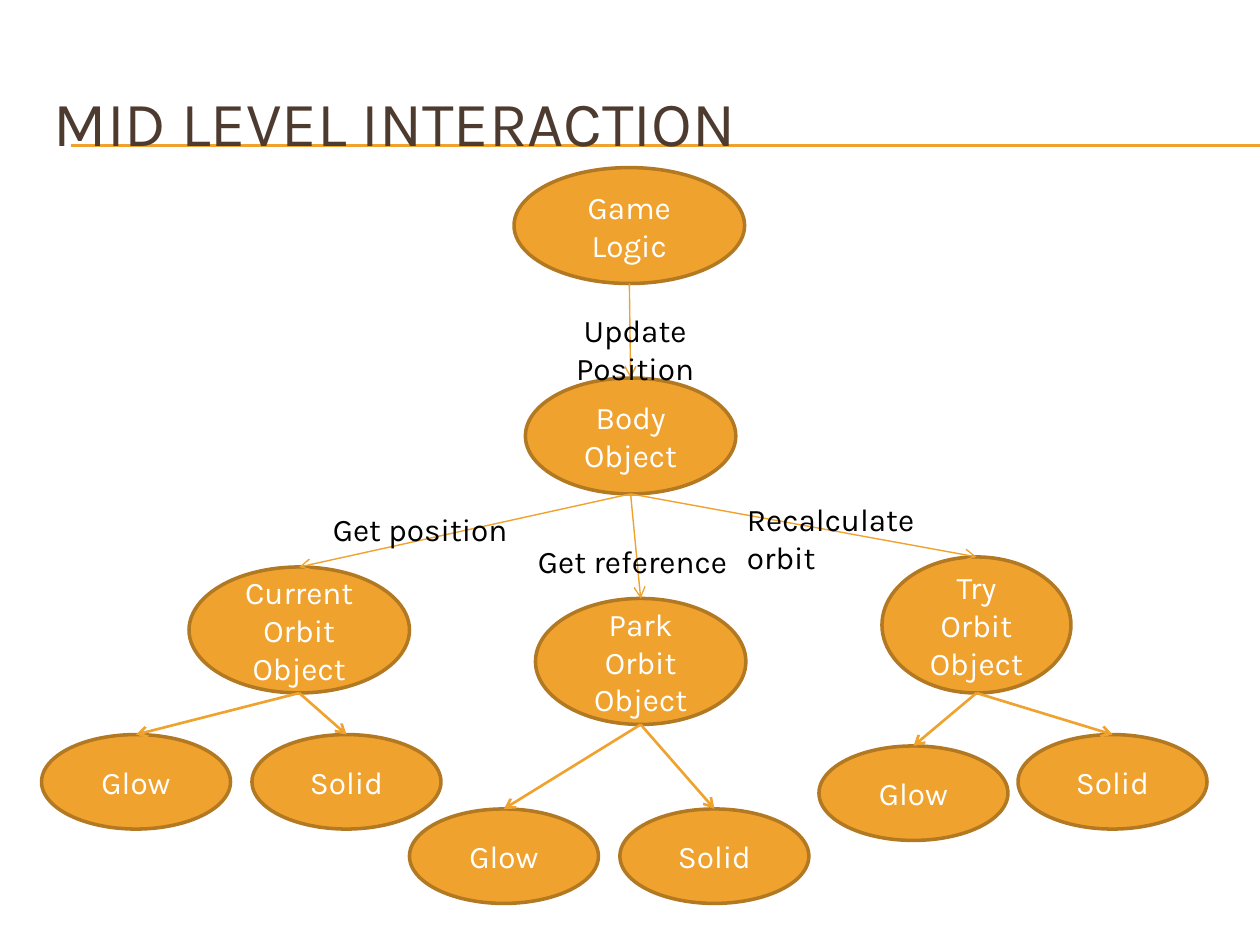
from pptx import Presentation
from pptx.dml.color import RGBColor
from pptx.enum.shapes import MSO_CONNECTOR, MSO_SHAPE
from pptx.enum.text import MSO_ANCHOR, PP_ALIGN
from pptx.oxml.ns import qn
from pptx.util import Inches, Pt
from lxml import etree

FONT = "Karla"
AMBER, BRONZE, BROWN = "F0A22E", "B27822", "4E3B30"
WHITE, BLACK = "FFFFFF", "000000"


def color(hex_value):
    return RGBColor.from_string(hex_value)


def write(shape, text, size, hex_value, align, anchor):
    frame = shape.text_frame
    frame.word_wrap = True
    frame.vertical_anchor = anchor
    frame.text = text
    paragraph = frame.paragraphs[0]
    paragraph.alignment = align
    font = paragraph.runs[0].font
    font.name, font.size = FONT, Pt(size)
    font.color.rgb = color(hex_value)


def add_text(slide, box, text, size=18, hex_value=BLACK,
             align=PP_ALIGN.LEFT, anchor=MSO_ANCHOR.TOP):
    label = slide.shapes.add_textbox(*map(Inches, box))
    write(label, text, size, hex_value, align, anchor)


def add_line(slide, start, end, width):
    line = slide.shapes.add_connector(MSO_CONNECTOR.STRAIGHT, *start, *end)
    line.line.color.rgb = color(AMBER)
    line.line.width = Pt(width)
    etree.SubElement(line._element.spPr, qn("a:effectLst"))
    return line


def add_arrow(slide, parent, child, width):
    """Arrow from the bottom of one node to the top of another."""
    start = parent.left + parent.width // 2, parent.top + parent.height
    end = child.left + child.width // 2, child.top
    arrow = add_line(slide, start, end, width)
    etree.SubElement(arrow.get_or_add_ln(), qn("a:tailEnd"), type="arrow")


def add_node(slide, box, text):
    node = slide.shapes.add_shape(MSO_SHAPE.OVAL, *map(Inches, box))
    node.shadow.inherit = False
    node.fill.solid()
    node.fill.fore_color.rgb = color(AMBER)
    node.line.color.rgb = color(BRONZE)
    node.line.width = Pt(2)
    write(node, text, 18, WHITE, PP_ALIGN.CENTER, MSO_ANCHOR.MIDDLE)
    return node


def add_header(slide, box, title):
    left, top = box[:2]
    # Double rule running to the right edge
    for offset in (0.65, 0.66):
        y = Inches(top + offset)
        add_line(slide, (Inches(left + 0.23), y), (Inches(10), y), 0.75)
    add_text(slide, box, title, 36, BROWN, anchor=MSO_ANCHOR.MIDDLE)


def add_orbit(slide, body, box, name, leaves):
    """Orbit node with its leaves, whose offsets are from the box corner."""
    left, top = box[:2]
    orbit = add_node(slide, box, name)
    add_arrow(slide, body, orbit, 0.79)
    for text, (dx, dy) in zip(("Glow", "Solid"), leaves):
        leaf = add_node(slide, (left + dx, top + dy, 1.5, 0.75), text)
        add_arrow(slide, orbit, leaf, 1.5)


def add_tree(slide, box):
    left, top = box[:2]

    def place(x, y, width, height):
        return left + x, top + y, width, height

    # Root and body
    game_logic = add_node(slide, place(3.75, 0, 1.83, 0.92), "Game Logic")
    body = add_node(slide, place(3.84, 1.67, 1.67, 0.92), "Body Object")
    add_arrow(slide, game_logic, body, 0.79)

    # Orbit branches
    orbits = [
        ("Current Orbit Object", (1.17, 3.17, 1.75, 1), [(-1.17, 1.33), (0.5, 1.33)]),
        ("Park Orbit Object", (3.92, 3.42, 1.67, 1), [(-1, 1.67), (0.67, 1.67)]),
        ("Try Orbit Object", (6.67, 3.09, 1.5, 1.08), [(-0.5, 1.5), (1.08, 1.41)]),
    ]
    for name, orbit_box, leaves in orbits:
        add_orbit(slide, body, place(*orbit_box), name, leaves)

    # Messages on the arrows
    messages = [
        ("Get position", (1.92, 2.67, 2.17, 0.4), PP_ALIGN.CENTER),
        ("Update Position", (3.75, 1.09, 1.92, 0.4), PP_ALIGN.CENTER),
        ("Get reference", (3.84, 2.92, 1.75, 0.4), PP_ALIGN.LEFT),
        ("Recalculate orbit", (5.5, 2.59, 2.08, 0.4), PP_ALIGN.LEFT),
    ]
    for text, message_box, align in messages:
        add_text(slide, place(*message_box), text, align=align)


def main():
    deck = Presentation()
    deck.slide_width, deck.slide_height = Inches(10), Inches(7.5)
    slide = deck.slides.add_slide(deck.slide_layouts[6])
    add_header(slide, (0.33, 0.5, 9.5, 0.92), "MID LEVEL INTERACTION")
    add_tree(slide, (0.33, 1.33, 9.25, 5.84))
    deck.save("out.pptx")


if __name__ == "__main__":
    main()
